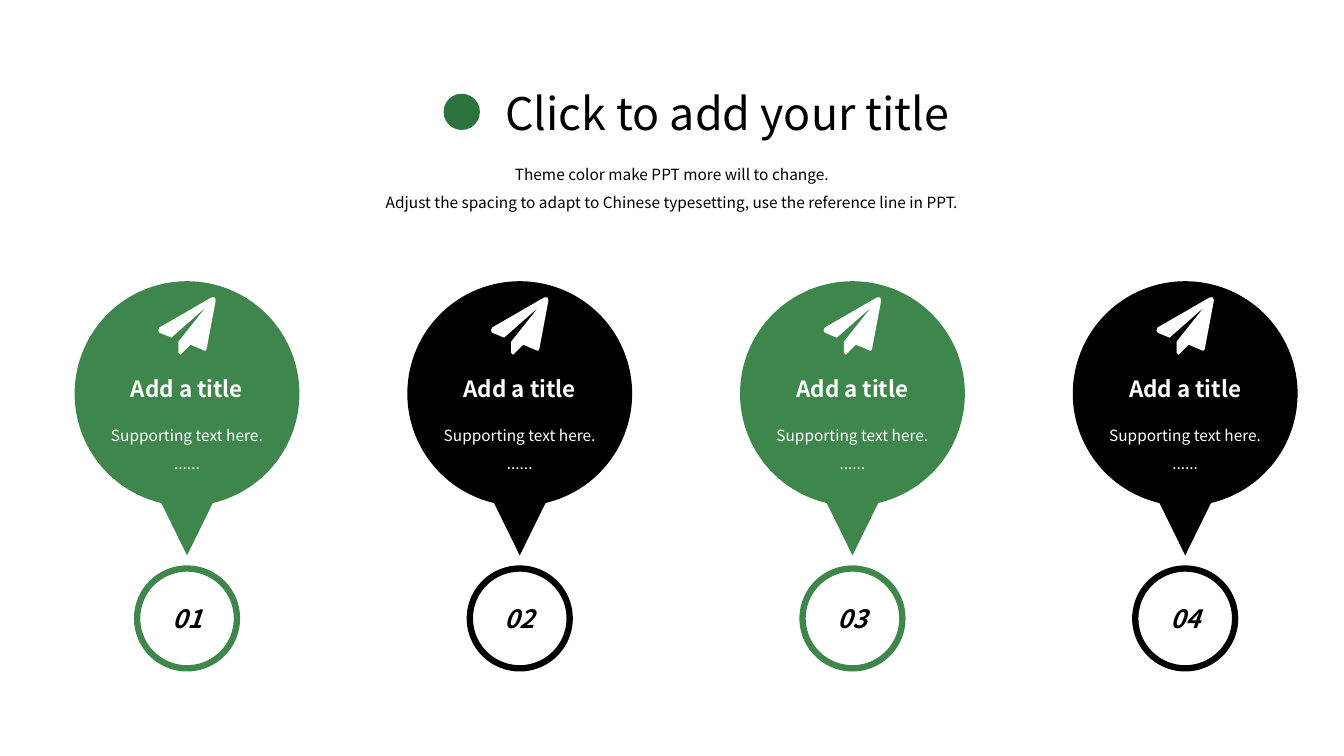
from pptx import Presentation
from pptx.dml.color import RGBColor
from pptx.enum.shapes import MSO_SHAPE
from pptx.enum.text import MSO_ANCHOR, MSO_AUTO_SIZE, PP_ALIGN
from pptx.util import Inches, Pt

TITLE = "Click to add your title"
INTRO = [
    "Theme color make PPT more will to change.",
    "Adjust the spacing to adapt to Chinese typesetting, use the reference line in PPT.",
]
SUPPORT = ["Supporting text here.", "......"]
CARDS = [
    ("01", "Add a title", SUPPORT, "green"),
    ("02", "Add a title", SUPPORT, "black"),
    ("03", "Add a title", SUPPORT, "green"),
    ("04", "Add a title", SUPPORT, "black"),
]
COLORS = {"green": "3E864B", "dark": "2D733D", "black": "000000", "white": "FFFFFF"}
FONT = "Noto Sans CJK JP"

# Paper plane outline, in hundredths of an inch
PLANE = [
    (57, 3), (48, 51), (47, 53), (46, 53), (32, 47), (23, 56), (22, 57), (20, 55),
    (20, 44), (47, 10), (13, 40), (1, 35), (0, 33), (1, 30), (53, 0), (56, 0),
]

# Inches
WIDTH, HEIGHT = 13.33, 7.5
LEFT, PITCH = 0.74, 3.3
DISC, TAIL, RING = 2.23, 0.57, 0.99
TOP = {"plane": 2.95, "disc": 2.79, "head": 3.62, "text": 4.09, "tail": 4.93, "ring": 5.64}


def color(name):
    return RGBColor.from_string(COLORS[name])


def paint(shape, fill, line=None):
    shape.shadow.inherit = False
    shape.fill.solid()
    shape.fill.fore_color.rgb = color(fill)
    if line:
        shape.line.color.rgb = color(line)
        shape.line.width = Pt(4.5)
    else:
        shape.line.fill.background()


def add_shape(kind, x, y, w, h, fill, line=None):
    shape = slide.shapes.add_shape(kind, Inches(x), Inches(y), Inches(w), Inches(h))
    paint(shape, fill, line)
    return shape


def write(shape, lines, size, ink="black", align=PP_ALIGN.CENTER, anchor=MSO_ANCHOR.MIDDLE,
          space=None, bold=False, italic=False):
    frame = shape.text_frame
    frame.word_wrap = True
    frame.auto_size = MSO_AUTO_SIZE.NONE
    frame.vertical_anchor = anchor
    frame.text = "\n".join(lines)
    for para in frame.paragraphs:
        para.alignment = align
        para.line_spacing = space
        font = para.font
        font.name, font.size = FONT, Pt(size)
        font.bold, font.italic = bold, italic
        font.color.rgb = color(ink)


def add_text(x, y, w, h, lines, size, **style):
    box = slide.shapes.add_textbox(Inches(x), Inches(y), Inches(w), Inches(h))
    write(box, lines, size, **style)


def add_plane(x, y):
    pen = slide.shapes.build_freeform(*PLANE[0], scale=Inches(0.01))
    pen.add_line_segments(PLANE[1:], close=True)
    paint(pen.convert_to_shape(Inches(x), Inches(y)), "white")


def add_card(x, number, head, lines, tone):
    mid = x + DISC / 2
    add_shape(MSO_SHAPE.OVAL, x, TOP["disc"], DISC, DISC, tone)
    tail = add_shape(MSO_SHAPE.ISOSCELES_TRIANGLE, mid - TAIL / 2, TOP["tail"],
                     TAIL, 0.58, tone)
    tail.rotation = 180
    add_plane(mid - TAIL / 2, TOP["plane"])
    ring = add_shape(MSO_SHAPE.OVAL, mid - RING / 2, TOP["ring"], RING, RING, "white", tone)
    write(ring, [number], 18, bold=True, italic=True)
    add_text(x, TOP["text"], DISC, 0.75, lines, 11, ink="white",
             anchor=MSO_ANCHOR.TOP, space=1.5)
    add_text(x, TOP["head"], DISC, 0.47, [head], 16, ink="white", bold=True)


deck = Presentation()
deck.slide_width, deck.slide_height = Inches(WIDTH), Inches(HEIGHT)
slide = deck.slides.add_slide(deck.slide_layouts[5])

title = slide.shapes.title
title.left, title.top = Inches(4.91), Inches(0.8)
title.width, title.height = Inches(5.13), Inches(0.64)
write(title, [TITLE], 32, align=PP_ALIGN.LEFT)
add_shape(MSO_SHAPE.OVAL, 4.4, 0.93, 0.36, 0.36, "dark")
add_text(LEFT, 1.5, WIDTH - 2 * LEFT, 0.65, INTRO, 11, anchor=MSO_ANCHOR.TOP, space=1.5)

for col, card in enumerate(CARDS):
    add_card(LEFT + col * PITCH, *card)

deck.save("out.pptx")
